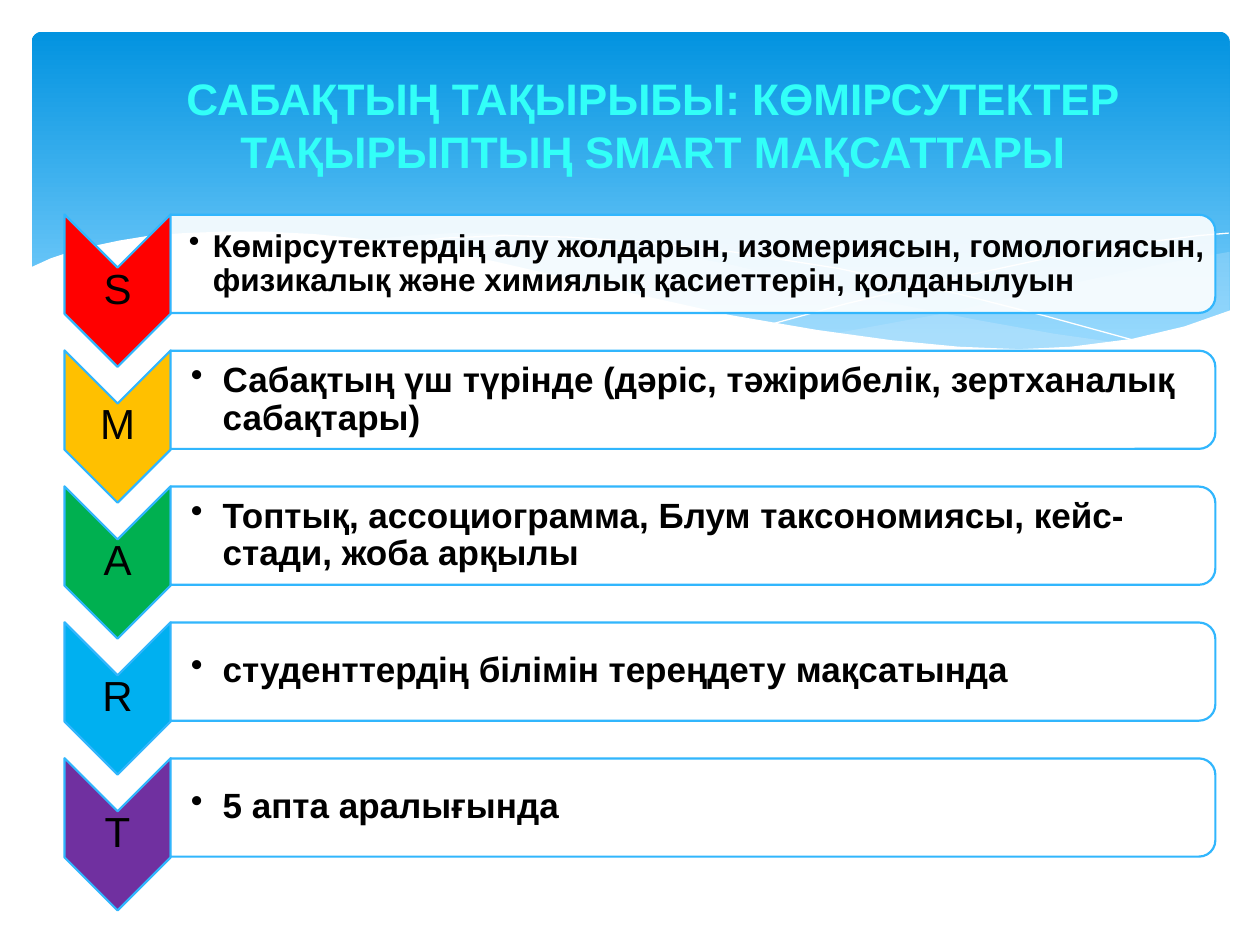
from dataclasses import dataclass

from lxml import etree
from pptx import Presentation
from pptx.dml.color import RGBColor
from pptx.enum.shapes import MSO_SHAPE
from pptx.enum.text import MSO_ANCHOR, PP_ALIGN
from pptx.oxml.ns import qn
from pptx.util import Cm, Pt

ROUND = MSO_SHAPE.ROUNDED_RECTANGLE
CHEVRON = MSO_SHAPE.CHEVRON
PANEL = MSO_SHAPE.ROUND_2_SAME_RECTANGLE
MIDDLE = MSO_ANCHOR.MIDDLE
CENTER = PP_ALIGN.CENTER
LEFT = PP_ALIGN.LEFT


@dataclass(frozen=True)
class Theme:
    font: str = "Arial"
    white: str = "FFFFFF"
    black: str = "000000"
    edge: str = "31B6FD"
    deep: str = "0293E0"
    sky: str = "83D3FE"
    wave: str = "C6E7FC"
    title: str = "32FFF8"
    head: float = 25.2
    letter: int = 24
    body: int = 20
    small: int = 18
    border: float = 1.25


THEME = Theme()

STEPS = [
    ("S", "FF0000", THEME.small, "Көмірсутектердің алу жолдарын, изомериясын, гомологиясын, "
     "физикалық және химиялық қасиеттерін, қолданылуын"),
    ("M", "FFC000", THEME.body, "Сабақтың үш түрінде (дәріс, тәжірибелік, зертханалық сабақтары)"),
    ("A", "00B050", THEME.body, "Топтық, ассоциограмма, Блум таксономиясы, кейс-стади, жоба арқылы"),
    ("R", "00B0F0", THEME.body, "студенттердің білімін тереңдету мақсатында"),
    ("T", "7030A0", THEME.body, "5 апта аралығында"),
]
TITLE = ["САБАҚТЫҢ ТАҚЫРЫБЫ: КӨМІРСУТЕКТЕР", "ТАҚЫРЫПТЫҢ SMART МАҚСАТТАРЫ"]

RIGHT_WAVE = [
    (24.77, 5.08), (23.39, 5.33), (21.87, 5.66), (19.13, 6.3), (16.79, 6.73),
    (17.91, 6.88), (18.92, 6.99), (19.84, 7.04), (20.93, 7.04), (21.92, 6.99),
    (22.78, 6.86), (23.57, 6.68), (24.1, 6.53), (24.79, 6.27), (24.79, 5.08),
]
LONG_WAVE = [
    (22.68, 6.93), (21.26, 6.73), (19.69, 6.45), (17.93, 6.1), (15.98, 5.64),
    (14.83, 5.36), (13.74, 5.15), (12.42, 4.97), (11.23, 4.8), (10.13, 4.72),
    (9.17, 4.7), (8.33, 4.75), (7.26, 4.85), (8.69, 5.05), (10.26, 5.36),
    (11.4, 5.64), (13.46, 6.1), (15.27, 6.48), (16.9, 6.76), (18.34, 6.96),
    (19.63, 7.04), (20.78, 7.06), (21.77, 7.03),
]
LONG_CURVE = [
    (7.85, 4.95), (8.97, 4.8), (10.19, 4.75), (11.43, 4.78), (12.95, 4.88),
    (14.78, 5.08), (16.89, 5.41), (19.3, 5.92), (21.11, 6.38), (23.04, 6.91),
]
RIGHT_CURVE = [
    (15.57, 6.53), (17.07, 6.12), (19, 5.66), (21.23, 5.18), (22.74, 4.93),
    (24.16, 4.75), (24.77, 4.7),
]
WHITE_WAVE = [
    (24.82, 6.25), (23.88, 6.58), (22.83, 6.83), (21.59, 6.99), (20.55, 7.04),
    (19.33, 6.99), (17.98, 6.86), (16.46, 6.65), (14.71, 6.35), (12.78, 5.92),
    (11.35, 5.59), (9.93, 5.26), (8.64, 5), (7.42, 4.83), (6.35, 4.72),
    (5.36, 4.67), (4.5, 4.67), (3.71, 4.7), (3.02, 4.75), (2.41, 4.85),
    (1.93, 4.95), (1.5, 5.05), (1.02, 5.21), (0.58, 5.41), (0.58, 8.36),
    (24.82, 8.36),
]


def color(code):
    return RGBColor.from_string(code)


def paint(shape, code, alpha=100):
    shape.fill.solid()
    shape.fill.fore_color.rgb = color(code)
    if alpha < 100:
        tint = shape.fill._xPr.find(qn("a:solidFill"))[0]
        etree.SubElement(tint, qn("a:alpha")).set("val", str(alpha * 1000))


def outline(shape, code, width):
    shape.line.color.rgb = color(code)
    shape.line.width = Pt(width)


def add_free(slide, points, closed):
    dots = [(Cm(x), Cm(y)) for x, y in points]
    pen = slide.shapes.build_freeform(*dots[0])
    pen.add_line_segments(dots[1:], close=closed)
    shape = pen.convert_to_shape()
    shape.shadow.inherit = False
    return shape


def add_wave(slide, points, code, alpha=100):
    shape = add_free(slide, points, True)
    paint(shape, code, alpha)
    shape.line.fill.background()


def add_curve(slide, points):
    shape = add_free(slide, points, False)
    shape.fill.background()
    outline(shape, THEME.white, 0)


def add_sky(slide):
    shape = slide.shapes.add_shape(ROUND, Cm(0.64), Cm(0.64), Cm(24.15), Cm(6.86))
    shape.shadow.inherit = False
    shape.adjustments[0] = 0.03
    shape.line.fill.background()
    shape.fill.gradient()
    shape.fill.gradient_angle = 270
    for stop, code, place in zip(shape.fill.gradient_stops, (THEME.deep, THEME.sky), (0, 0.9)):
        stop.color.rgb = color(code)
        stop.position = place


def add_turned(slide, kind, mid_x, mid_y, width, height, code, alpha=100):
    shape = slide.shapes.add_shape(
        kind, Cm(mid_x - width / 2), Cm(mid_y - height / 2), Cm(width), Cm(height))
    shape.rotation = 90
    shape.shadow.inherit = False
    paint(shape, code, alpha)
    outline(shape, THEME.edge, THEME.border)


def add_text(slide, box, lines, size, code, bold=True, align=CENTER, pads=(0.25, 0.13), space=1):
    frame = slide.shapes.add_textbox(*map(Cm, box)).text_frame
    frame.word_wrap = True
    frame.vertical_anchor = MIDDLE
    frame.margin_left = Cm(pads[0])
    frame.margin_right = frame.margin_top = frame.margin_bottom = Cm(pads[1])
    para = frame.paragraphs[0]
    para.alignment = align
    para.line_spacing = space
    for i, line in enumerate(lines):
        if i:
            para.add_line_break()
        run = para.add_run()
        run.text = line
        run.font.name = THEME.font
        run.font.size = Pt(size)
        run.font.bold = bold
        run.font.color.rgb = color(code)
    return para


def add_bullet(para, indent):
    props = para._p.get_or_add_pPr()
    props.set("marL", str(Cm(indent)))
    props.set("indent", str(-Cm(indent)))
    etree.SubElement(props, qn("a:buChar")).set("char", "•")


def add_step(slide, top, letter, code, size, text):
    add_turned(slide, CHEVRON, 2.37, top + 1.53, 3.07, 2.14, code)
    add_text(slide, (1.3, top + 1.06, 2.14, 0.93), [letter], THEME.letter, THEME.black,
             bold=False, pads=(0.04, 0.04), space=0.9)
    add_turned(slide, PANEL, 13.97, top + 0.99, 1.98, 21.06, THEME.white, 90)
    para = add_text(slide, (3.45, top + 0.09, 20.96, 1.8), [text], size, THEME.black,
                    align=LEFT, pads=(size * 0.02, 0.03), space=0.9)
    add_bullet(para, 0.48 if size == THEME.small else 0.64)


def main():
    deck = Presentation()
    deck.slide_width, deck.slide_height = Cm(25.4), Cm(19.05)
    slide = deck.slides.add_slide(deck.slide_layouts[6])
    add_sky(slide)
    add_wave(slide, RIGHT_WAVE, THEME.wave, 29)
    add_wave(slide, LONG_WAVE, THEME.wave, 40)
    add_curve(slide, LONG_CURVE)
    add_curve(slide, RIGHT_CURVE)
    add_wave(slide, WHITE_WAVE, THEME.white)
    for i, step in enumerate(STEPS):
        add_step(slide, 4.33 + i * 2.74, *step)
    add_text(slide, (2.69, 0.91, 20.83, 3.18), TITLE, THEME.head, THEME.title)
    deck.save("out.pptx")


if __name__ == "__main__":
    main()
